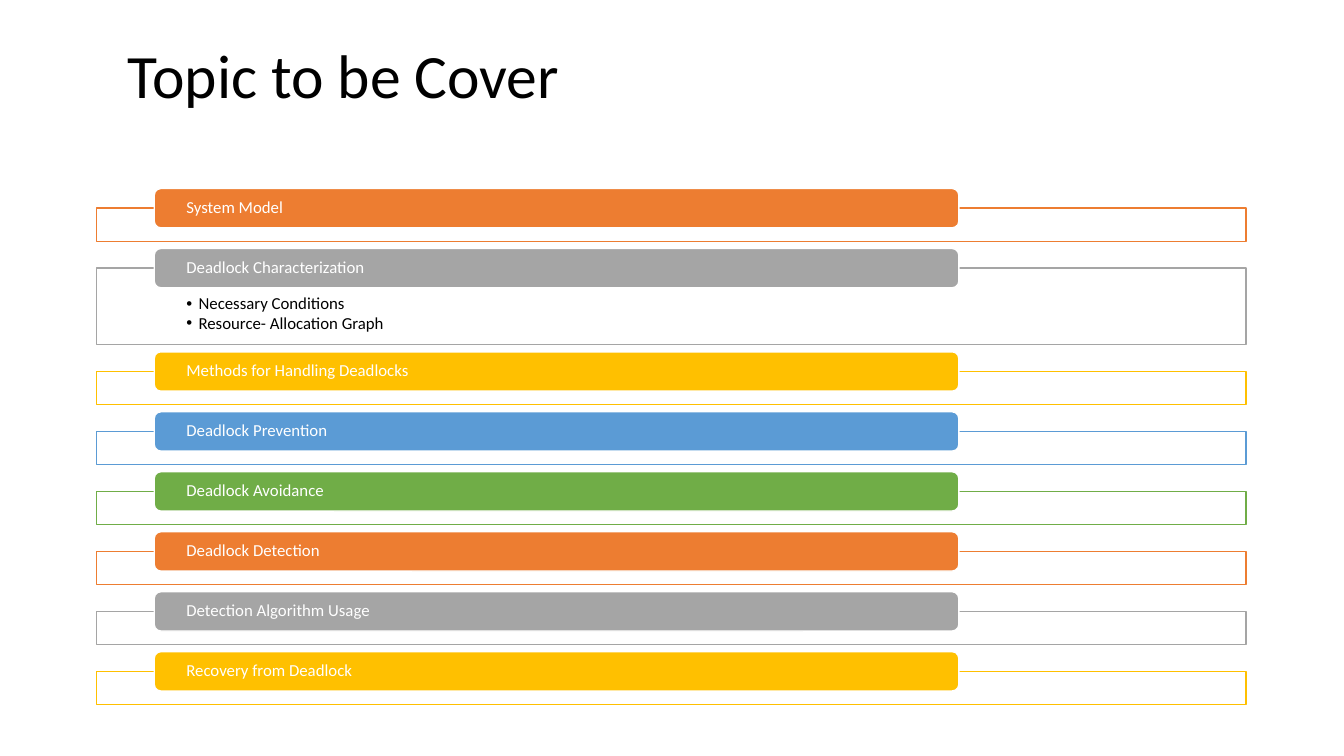
from lxml.etree import SubElement
from pptx import Presentation
from pptx.dml.color import RGBColor
from pptx.enum.shapes import MSO_SHAPE
from pptx.enum.text import MSO_ANCHOR, PP_ALIGN
from pptx.oxml.ns import qn
from pptx.util import Inches, Pt

TITLE = "Topic to be Cover"
TOPICS = [
    ("System Model", []),
    ("Deadlock Characterization",
     ["Necessary Conditions", "Resource- Allocation Graph"]),
    ("Methods for Handling Deadlocks", []),
    ("Deadlock Prevention", []),
    ("Deadlock Avoidance", []),
    ("Deadlock Detection", []),
    ("Detection Algorithm Usage", []),
    ("Recovery from Deadlock", []),
]
COLORS = ["ED7D31", "A5A5A5", "FFC000", "5B9BD5", "70AD47"]
WHITE, BLACK = "FFFFFF", "000000"

WIDTH, HEIGHT = 13.33, 7.5
LEFT, WIDE = 0.96, 11.4      # frames
INDENT, SHARE = 0.05, 0.7    # bar offset and width, as shares of a frame
TOP, BAR, GAP = 1.87, 0.39, 0.07
FRAME, DETAIL = 0.33, 0.43   # plain frame height, extra height for bullets


def color(code):
    return RGBColor.from_string(code)


def add_box(slide, kind, place, fill, line):
    box = slide.shapes.add_shape(kind, *map(Inches, place))
    box.shadow.inherit = False
    box.fill.solid()
    box.fill.fore_color.rgb = color(fill)
    box.line.color.rgb = color(line)
    box.line.width = Pt(1)
    return box


def set_frame(shape, anchor, sides):
    """Set wrapping, anchor and left, top, right, bottom insets."""
    frame = shape.text_frame
    frame.word_wrap = True
    frame.vertical_anchor = anchor
    (frame.margin_left, frame.margin_top,
     frame.margin_right, frame.margin_bottom) = map(Inches, sides)
    return frame


def write(para, text, size, shade):
    para.alignment = PP_ALIGN.LEFT
    para.line_spacing = 0.9
    run = para.add_run()
    run.text = text
    run.font.name = "Calibri"
    run.font.size = Pt(size)
    run.font.color.rgb = color(shade)


def add_bullet(para):
    props = para._p.get_or_add_pPr()
    props.set("marL", str(Inches(0.12)))
    props.set("indent", str(-Inches(0.12)))
    SubElement(props, qn("a:buFont"), typeface="Arial")
    SubElement(props, qn("a:buChar"), char="•")


def add_topic(slide, top, name, points, shade):
    """Draw one frame with its bar; return the top of the next bar."""
    tall = FRAME + (DETAIL if points else 0)
    middle = top + BAR / 2
    box = add_box(slide, MSO_SHAPE.RECTANGLE, (LEFT, middle, WIDE, tall),
                  WHITE, shade)
    fill = box.fill._xPr.find(qn("a:solidFill"))
    SubElement(fill[0], qn("a:alpha"), val="90000")
    if points:
        frame = set_frame(box, MSO_ANCHOR.TOP, (0.89, 0.27, 0.89, 0.09))
        for i, point in enumerate(points):
            para = frame.add_paragraph() if i else frame.paragraphs[0]
            write(para, point, 12, BLACK)
            para.space_after = Pt(1.2)
            add_bullet(para)

    place = (LEFT + WIDE * INDENT, top, WIDE * SHARE, BAR)
    bar = add_box(slide, MSO_SHAPE.ROUNDED_RECTANGLE, place, shade, WHITE)
    frame = set_frame(bar, MSO_ANCHOR.MIDDLE, (0.3, 0, 0.3, 0))
    write(frame.paragraphs[0], name, 12, WHITE)
    return middle + tall + GAP


def main():
    deck = Presentation()
    deck.slide_width, deck.slide_height = Inches(WIDTH), Inches(HEIGHT)
    slide = deck.slides.add_slide(deck.slide_layouts[6])

    title = slide.shapes.add_textbox(*map(Inches, (1.17, 0.23, 8.62, 1.09)))
    frame = set_frame(title, MSO_ANCHOR.MIDDLE, (0.1, 0.05, 0.1, 0.05))
    write(frame.paragraphs[0], TITLE, 44, BLACK)

    top = TOP
    for i, (name, points) in enumerate(TOPICS):
        top = add_topic(slide, top, name, points, COLORS[i % len(COLORS)])
    deck.save("out.pptx")


if __name__ == "__main__":
    main()
